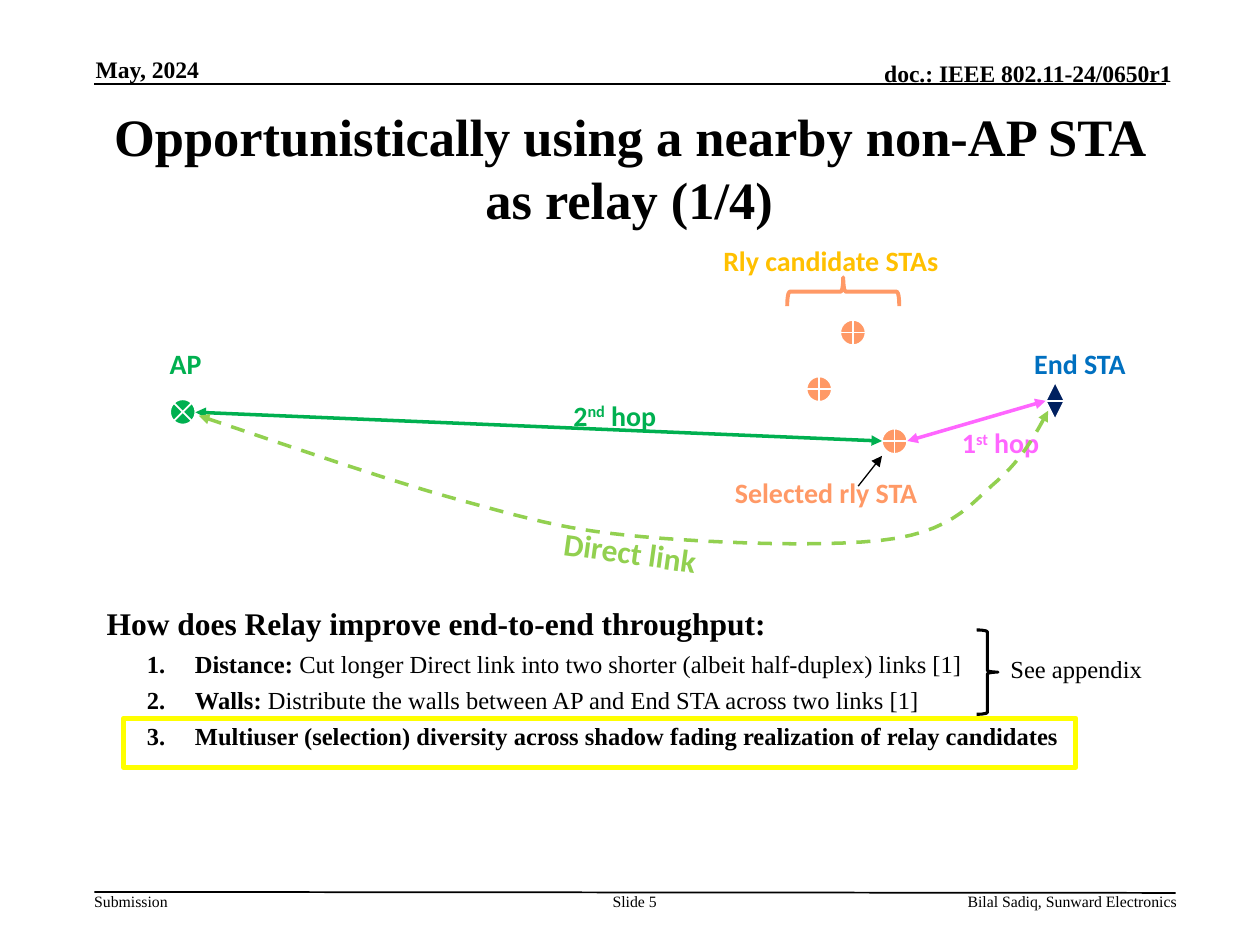
from dataclasses import dataclass

from lxml.etree import SubElement
from pptx import Presentation
from pptx.dml.color import RGBColor
from pptx.enum.dml import MSO_LINE
from pptx.enum.shapes import MSO_CONNECTOR, MSO_SHAPE as Shape
from pptx.enum.text import MSO_ANCHOR as Anchor, MSO_AUTO_SIZE as AutoSize, PP_ALIGN as Align
from pptx.oxml.ns import qn
from pptx.util import Cm, Pt


@dataclass(frozen=True)
class Theme:
    """Fonts, colours and type sizes of the slide."""
    serif: str = "Times New Roman"
    sans: str = "Calibri"
    ink: str = "000000"
    white: str = "FFFFFF"
    ap: str = "00B050"
    end_sta: str = "0070C0"
    end_mark: str = "002060"
    relay: str = "FF9966"
    candidates: str = "FFC000"
    first_hop: str = "FF66FF"
    direct: str = "92D050"
    highlight: str = "FFFF00"
    title: float = 30
    heading: float = 18
    label: float = 16
    item: float = 14
    header: float = 13.5
    footer: float = 9


class SlideBuilder:
    """Draws styled elements on the current slide, in centimetres."""

    def __init__(self, slide, theme):
        """Keep the slide and its theme."""
        self.slide = slide
        self.theme = theme

    def run(self, paragraph, text, size, color=None, bold=False, font=None, raised=False):
        """Add one formatted run."""
        run = paragraph.add_run()
        run.text = text
        run.font.size = Pt(size)
        run.font.name = font or self.theme.serif
        run.font.bold = bold
        run.font.color.rgb = RGBColor.from_string(color or self.theme.ink)
        if raised:
            run.font._element.set("baseline", "30000")

    def title(self, text, box):
        """Place and fill the title placeholder."""
        title = self.slide.shapes.title
        title.left, title.top, title.width, title.height = map(Cm, box)
        frame = title.text_frame
        frame.word_wrap = True
        frame.auto_size = AutoSize.NONE
        frame.vertical_anchor = Anchor.MIDDLE
        frame.paragraphs[0].alignment = Align.CENTER
        self.run(frame.paragraphs[0], text, self.theme.title, bold=True)

    def frame(self, box, wrap=True, inset=True, anchor=Anchor.TOP, turn=0):
        """Add a text box and return its text frame."""
        holder = self.slide.shapes.add_textbox(*map(Cm, box))
        holder.rotation = turn
        frame = holder.text_frame
        frame.word_wrap = wrap
        frame.vertical_anchor = anchor
        if not inset:
            frame.margin_left = frame.margin_right = frame.margin_top = frame.margin_bottom = 0
        return frame

    def margin_note(self, text, box, size, align=Align.LEFT, anchor=Anchor.TOP, bold=False):
        """Add a header or footer text without insets."""
        paragraph = self.frame(box, inset=False, anchor=anchor).paragraphs[0]
        paragraph.alignment = align
        self.run(paragraph, text, size, bold=bold)

    def label(self, parts, box, color, align=Align.CENTER, size=None, turn=0):
        """Add a diagram label whose second part, if any, is superscript."""
        paragraph = self.frame(box, turn=turn).paragraphs[0]
        paragraph.alignment = align
        for position, part in enumerate(parts):
            self.run(paragraph, part, size or self.theme.label, color, True,
                     self.theme.sans, raised=position == 1)

    def numbered_list(self, heading, items, box):
        """Add a heading followed by numbered items of bold and plain text."""
        frame = self.frame(box)
        frame.paragraphs[0].alignment = Align.JUSTIFY
        self.run(frame.paragraphs[0], heading, self.theme.heading, bold=True)
        for strong, plain in items:
            paragraph = frame.add_paragraph()
            properties = paragraph._p.get_or_add_pPr()
            properties.set("marL", str(Cm(1.78)))
            properties.set("indent", str(Cm(-0.97)))
            SubElement(properties, qn("a:buFont"), typeface=self.theme.serif)
            SubElement(properties, qn("a:buAutoNum"), type="arabicPeriod")
            paragraph.alignment = Align.JUSTIFY
            paragraph.space_before = Pt(3.8)
            self.run(paragraph, strong, self.theme.item, bold=True)
            if plain:
                self.run(paragraph, plain, self.theme.item)

    def shape(self, kind, box, line, weight=1, fill=None, turn=0):
        """Add a preset shape, hollow unless a fill is given."""
        shape = self.slide.shapes.add_shape(kind, *map(Cm, box))
        shape.rotation = turn
        self.paint(shape, line, weight, fill)
        return shape

    def paint(self, shape, line, weight, fill=None):
        """Set the line and fill of a shape and drop its shadow."""
        shape.shadow.inherit = False
        if fill:
            shape.fill.solid()
            shape.fill.fore_color.rgb = RGBColor.from_string(fill)
        else:
            shape.fill.background()
        self.stroke(shape, line, weight)

    def stroke(self, item, color, weight, ends=()):
        """Set a line's colour, width and arrowheads."""
        item.line.color.rgb = RGBColor.from_string(color)
        item.line.width = Pt(weight)
        for end in ends:
            SubElement(item.line._get_or_add_ln(), qn(f"a:{end}"), type="triangle")

    def line(self, start, finish, color, weight=1, ends=()):
        """Add a straight connector."""
        line = self.slide.shapes.add_connector(
            MSO_CONNECTOR.STRAIGHT, *map(Cm, (*start, *finish)))
        self.stroke(line, color, weight, ends)
        SubElement(line._element.spPr, qn("a:effectLst"))
        return line

    def curve(self, start, segments, color, weight, ends, steps=12):
        """Add a dashed open outline along cubic curves."""
        points = []
        origin = start
        for controls in segments:
            for step in range(1, steps + 1):
                t = step / steps
                weights = ((1 - t) ** 3, 3 * t * (1 - t) ** 2, 3 * t * t * (1 - t), t ** 3)
                corners = (origin, *controls)
                points.append(tuple(Cm(sum(w * c[axis] for w, c in zip(weights, corners)))
                                    for axis in (0, 1)))
            origin = controls[-1]
        builder = self.slide.shapes.build_freeform(*map(Cm, start))
        builder.add_line_segments(points, close=False)
        outline = builder.convert_to_shape()
        self.paint(outline, color, weight)
        outline.line.dash_style = MSO_LINE.DASH
        self.stroke(outline, color, weight, ends)


def draw_frame(page, theme):
    """Draw the header and footer."""
    page.line((1.9, 1.7), (23.5, 1.7), theme.ink)
    page.line((1.9, 17.98), (23.7, 18), theme.ink)
    page.margin_note("May, 2024", (1.93, 0.91, 5.21, 0.76), theme.header,
                     anchor=Anchor.BOTTOM, bold=True)
    page.margin_note("doc.: IEEE 802.11-24/0650r1", (13.89, 0.99, 9.73, 0.76), theme.header,
                     Align.RIGHT, Anchor.BOTTOM, True)
    page.margin_note("Submission", (1.9, 17.98, 1.7, 0.38), theme.footer)
    page.margin_note("Slide 5", (12.06, 17.98, 1.47, 1.02), theme.footer, Align.CENTER)
    page.margin_note("Bilal Sadiq, Sunward Electronics", (14.88, 17.98, 8.84, 0.51),
                     theme.footer, Align.RIGHT)


def draw_network(page, theme):
    """Draw the stations and the links between them."""
    both = ("headEnd", "tailEnd")
    page.label(["Rly candidate STAs"], (13.79, 4.78, 5.92, 0.94), theme.candidates)
    page.shape(Shape.RIGHT_BRACE, (16.71, 4.75, 0.58, 2.26), theme.relay, 2.25, turn=270)
    page.shape(Shape.FLOWCHART_SUMMING_JUNCTION, (3.43, 8.05, 0.51, 0.51),
               theme.white, fill=theme.ap)
    for left, top in ((16.94, 6.45), (16.26, 7.59), (17.78, 8.64)):
        page.shape(Shape.FLOWCHART_OR, (left, top, 0.51, 0.51), theme.white, fill=theme.relay)
    end_station = page.shape(Shape.FLOWCHART_SORT, (21.08, 7.7, 0.38, 0.76),
                             theme.white, fill=theme.end_mark)
    page.label(["AP"], (3.17, 6.86, 1.5, 0.94), theme.ap, Align.LEFT)
    page.label(["End STA"], (20.6, 6.86, 2.46, 0.94), theme.end_sta, Align.LEFT)
    first_hop = page.line((21.08, 8.08), (18.29, 8.89), theme.first_hop, 2, both)
    first_hop.begin_connect(end_station, 1)
    page.label(["1", "st", " hop"], (18.52, 8.46, 3.3, 0.94), theme.first_hop)
    page.label(["Selected rly STA"], (14.33, 9.47, 4.65, 0.94), theme.relay)
    page.line((17.3, 9.8), (17.78, 9.19), theme.ink, 0.75, ("tailEnd",))
    page.line((3.94, 8.31), (17.78, 8.89), theme.ap, 2, both)
    page.label(["2", "nd", " hop"], (10.49, 7.9, 3.81, 0.94), theme.ap)
    page.curve((21.13, 8.28), (
        ((20.88, 8.76), (20.6, 9.25), (20.12, 9.68)),
        ((19.61, 10.11), (19.28, 10.64), (18.08, 10.85)),
        ((16.89, 11.05), (14.4, 10.95), (12.95, 10.82)),
        ((11.53, 10.69), (10.95, 10.54), (9.45, 10.13)),
        ((7.95, 9.73), (5.97, 9.04), (4.01, 8.38)),
    ), theme.direct, 2, both)
    page.label(["Direct link"], (10.8, 10.62, 3.81, 1.02), theme.direct,
               size=theme.heading, turn=7.9)


def draw_reasons(page, theme):
    """Write the reasons and mark the ones of interest."""
    page.numbered_list("How does Relay improve end-to-end throughput:", (
        ("Distance:", " Cut longer Direct link into two shorter (albeit half-duplex) links [1]"),
        ("Walls: ", "Distribute the walls between AP and End STA across two links [1]"),
        ("Multiuser (selection) diversity across shadow fading realization of relay candidates",
         ""),
    ), (1.9, 12.06, 21.59, 4.65))
    page.shape(Shape.RIGHT_BRACE, (19.69, 12.7, 0.43, 1.7), theme.ink, 1.75)
    appendix = page.frame((20.12, 13.06, 3.2, 0.86), wrap=False)
    page.run(appendix.paragraphs[0], "See appendix", theme.item)
    page.shape(Shape.RECTANGLE, (2.49, 14.48, 19.2, 0.99), theme.highlight, 3)


def main():
    """Build and save the deck."""
    theme = Theme()
    deck = Presentation()
    deck.slide_width, deck.slide_height = Cm(25.4), Cm(19.05)
    page = SlideBuilder(deck.slides.add_slide(deck.slide_layouts[5]), theme)
    draw_frame(page, theme)
    page.title("Opportunistically using a nearby non-AP STA as relay (1/4)",
               (1.47, 1.9, 22.43, 2.95))
    draw_network(page, theme)
    draw_reasons(page, theme)
    deck.save("out.pptx")


if __name__ == "__main__":
    main()
